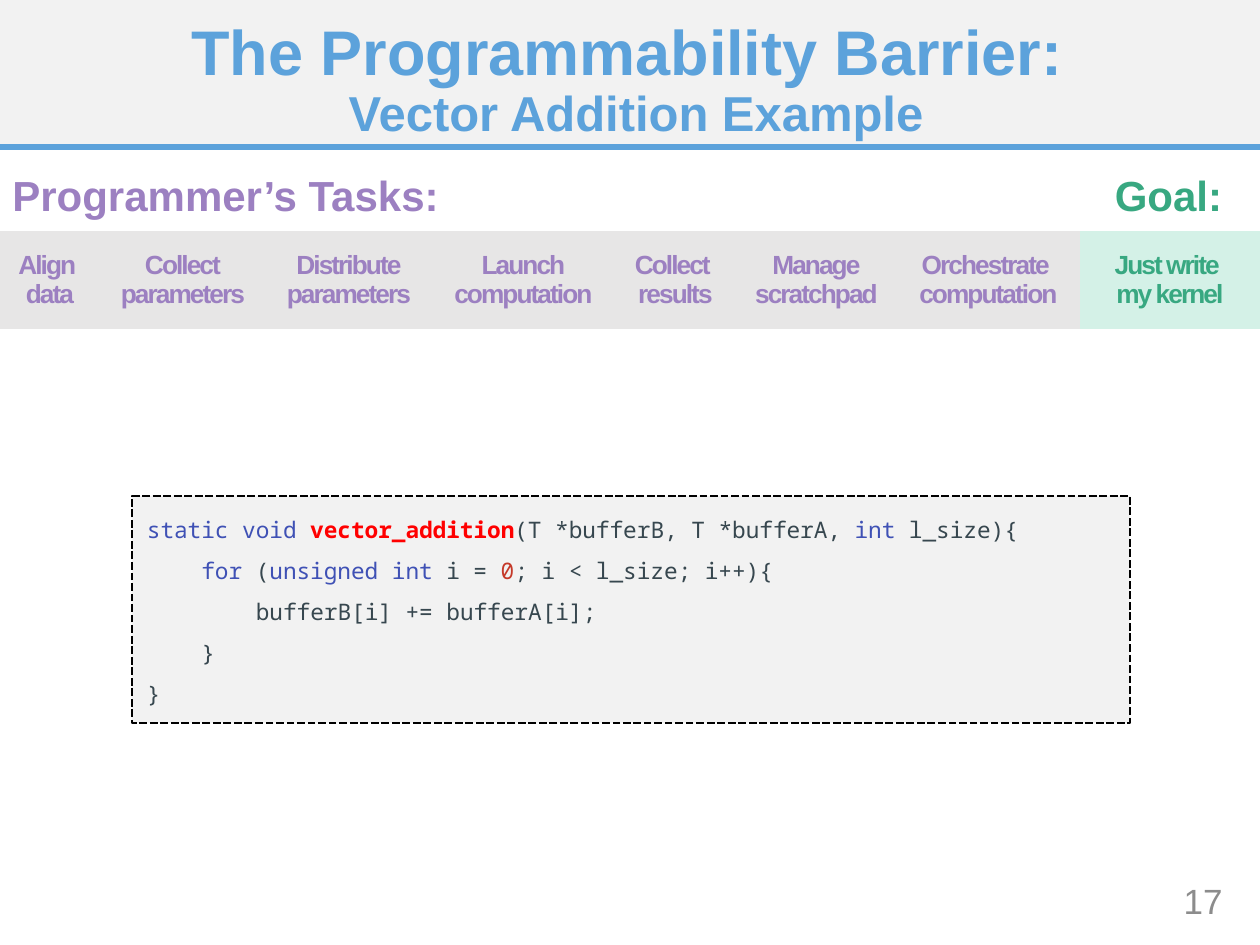
"""Build the slide on the programmability barrier, with its task table and kernel code."""
from copy import deepcopy

from lxml import etree
from pptx import Presentation
from pptx.dml.color import RGBColor
from pptx.enum.dml import MSO_LINE
from pptx.enum.shapes import MSO_CONNECTOR, MSO_SHAPE
from pptx.enum.text import MSO_ANCHOR, MSO_AUTO_SIZE, PP_ALIGN
from pptx.oxml.ns import qn
from pptx.util import Emu, Pt

LEFT, CENTER, RIGHT = PP_ALIGN.LEFT, PP_ALIGN.CENTER, PP_ALIGN.RIGHT
TOP, MIDDLE = MSO_ANCHOR.TOP, MSO_ANCHOR.MIDDLE
RECTANGLE, STRAIGHT = MSO_SHAPE.RECTANGLE, MSO_CONNECTOR.STRAIGHT
DASH, NO_AUTOFIT = MSO_LINE.SQUARE_DOT, MSO_AUTO_SIZE.NONE

BLUE = RGBColor(0x5C, 0xA2, 0xDB)
PURPLE = RGBColor(0x9C, 0x80, 0xC1)
GREEN = RGBColor(0x38, 0xA8, 0x81)
PALE_GREEN = RGBColor(0xD4, 0xF1, 0xE7)
PALE_GRAY = RGBColor(0xF2, 0xF2, 0xF2)
CELL_GRAY = RGBColor(0xE7, 0xE6, 0xE6)
NUMBER_GRAY = RGBColor(0x8C, 0x8C, 0x8C)
BLACK = RGBColor(0, 0, 0)
KEYWORD = RGBColor(0x3F, 0x51, 0xB5)
FUNCTION = RGBColor(0xFF, 0, 0)
PLAIN = RGBColor(0x37, 0x47, 0x4F)
NUMBER = RGBColor(0xC5, 0x39, 0x29)

WIDTH, HEIGHT = 1260, 945
HEADER_HEIGHT = 147
TABLE_TOP, TABLE_HEIGHT = 231, 98
PLAIN_TABLE_STYLE = "{2D5ABB26-0587-4C30-8999-92F81FD0307C}"
TRACKING = "-110"

TITLE = [[("The Programmability Barrier: \n", {"size": Pt(36)}),
          ("Vector Addition Example", {"size": Pt(28)})]]
TASKS = [
    (100, ["Align ", "data"]),
    (166, ["Collect", "parameters"]),
    (166, ["Distribute", "parameters"]),
    (183, ["Launch", "computation"]),
    (121, ["Collect ", "results"]),
    (161, ["Manage", "scratchpad"]),
    (183, ["Orchestrate \ncomputation"]),
]
GOAL = (180, ["Just write \nmy kernel"])
LABELS = [
    ("Programmer’s Tasks:", (0, 146, 1077, 98), LEFT, 24, PURPLE, True),
    ("Goal:", (1077, 146, 183, 98), CENTER, 24, GREEN, True),
    ("17", (1099, 876, 136, 50), RIGHT, 20, NUMBER_GRAY, False),
]
CODE = [
    [("static void ", KEYWORD), ("vector_addition", FUNCTION),
     ("(T *bufferB, T *bufferA, ", PLAIN), ("int ", KEYWORD), ("l_size){", PLAIN)],
    [("    ", PLAIN), ("for", KEYWORD), (" (", PLAIN), ("unsigned int ", KEYWORD),
     ("i = ", PLAIN), ("0", NUMBER), ("; i < l_size; i++){", PLAIN)],
    [("        bufferB[i] += bufferA[i];", PLAIN)],
    [("    }", PLAIN)],
    [("}", PLAIN)],
]


def px(length):
    return Emu(round(length * 914400 / 126))


def set_values(target, values):
    for key, value in values.items():
        setattr(target, key, value)


def write(frame, paragraphs, font, align, spacing=1.0, tracking=None):
    for index, runs in enumerate(paragraphs):
        paragraph = frame.paragraphs[0] if index == 0 else frame.add_paragraph()
        set_values(paragraph, {"alignment": align, "line_spacing": spacing,
                               "space_before": Pt(0), "space_after": Pt(0)})
        for text, changes in runs:
            values = {**font, **changes}
            color = values.pop("color")
            for number, line in enumerate(text.split("\n")):
                if number:
                    paragraph.add_line_break()
                    paragraph._p[-1].append(deepcopy(paragraph._p[-2].rPr))
                if line:
                    run = paragraph.add_run()
                    run.text = line
                    set_values(run.font, values)
                    run.font.color.rgb = color
                    if tracking:
                        run._r.rPr.set("spc", tracking)


def add_text(slide, box, paragraphs, font, align, anchor=MIDDLE, spacing=1.0):
    frame = slide.shapes.add_textbox(*map(px, box)).text_frame
    set_values(frame, {"word_wrap": True, "auto_size": NO_AUTOFIT, "vertical_anchor": anchor})
    write(frame, paragraphs, font, align, spacing)
    return frame


def add_panel(slide, box):
    panel = slide.shapes.add_shape(RECTANGLE, *map(px, box))
    panel.shadow.inherit = False
    panel.fill.solid()
    panel.fill.fore_color.rgb = PALE_GRAY
    panel.line.fill.background()
    return panel


def add_header(slide):
    add_panel(slide, (0, 0, WIDTH, HEADER_HEIGHT))
    rule = slide.shapes.add_connector(
        STRAIGHT, *map(px, (0, HEADER_HEIGHT, WIDTH, HEADER_HEIGHT)))
    rule.line.color.rgb = BLUE
    rule.line.width = Pt(3)
    etree.SubElement(rule._element.spPr, qn("a:effectLst"))

    title = slide.shapes.title
    slide.shapes._spTree.append(title._element)
    set_values(title, dict(zip(("left", "top", "width", "height"),
                               map(px, (23, 18, 1226, 127)))))
    set_values(title.text_frame, {"word_wrap": True, "auto_size": NO_AUTOFIT,
                                  "vertical_anchor": MIDDLE})
    write(title.text_frame, TITLE, {"name": "Arial", "bold": True, "color": BLUE}, CENTER, 0.9)


def add_tasks(slide):
    columns = [(*task, PURPLE, CELL_GRAY) for task in TASKS] + [(*GOAL, GREEN, PALE_GREEN)]
    holder = slide.shapes.add_table(
        1, len(columns), *map(px, (0, TABLE_TOP, WIDTH, TABLE_HEIGHT)))
    table = holder.table
    set_values(table, {"first_row": False, "horz_banding": False})
    next(holder._element.iter(qn("a:tableStyleId"))).text = PLAIN_TABLE_STYLE
    for index, (width, lines, color, fill) in enumerate(columns):
        table.columns[index].width = px(width)
        cell = table.cell(0, index)
        cell.vertical_anchor = MIDDLE
        cell.fill.solid()
        cell.fill.fore_color.rgb = fill
        font = {"name": "Arial", "size": Pt(15), "bold": True, "color": color}
        write(cell.text_frame, [[(line, {})] for line in lines], font, CENTER,
              tracking=TRACKING)


def add_code(slide):
    panel = add_panel(slide, (132, 496, 998, 227))
    panel.line.color.rgb = BLACK
    set_values(panel.line, {"width": Pt(1.5), "dash_style": DASH})
    lines = [[(text, {"color": color, "bold": color == FUNCTION}) for text, color in line]
             for line in CODE]
    frame = add_text(slide, (134, 489, 1174, 227), lines,
                     {"name": "Noto Sans Mono", "size": Pt(13)}, LEFT, TOP, 1.5)
    inset = px(13)
    set_values(frame, {"margin_left": inset, "margin_top": inset,
                       "margin_right": inset, "margin_bottom": inset})


def main():
    deck = Presentation()
    set_values(deck, {"slide_width": px(WIDTH), "slide_height": px(HEIGHT)})
    slide = deck.slides.add_slide(deck.slide_layouts.get_by_name("Title Only"))
    add_header(slide)
    add_tasks(slide)
    for text, box, align, size, color, bold in LABELS:
        add_text(slide, box, [[(text, {})]],
                 {"name": "Arial", "size": Pt(size), "bold": bold, "color": color}, align)
    add_code(slide)
    deck.save("out.pptx")


if __name__ == "__main__":
    main()
